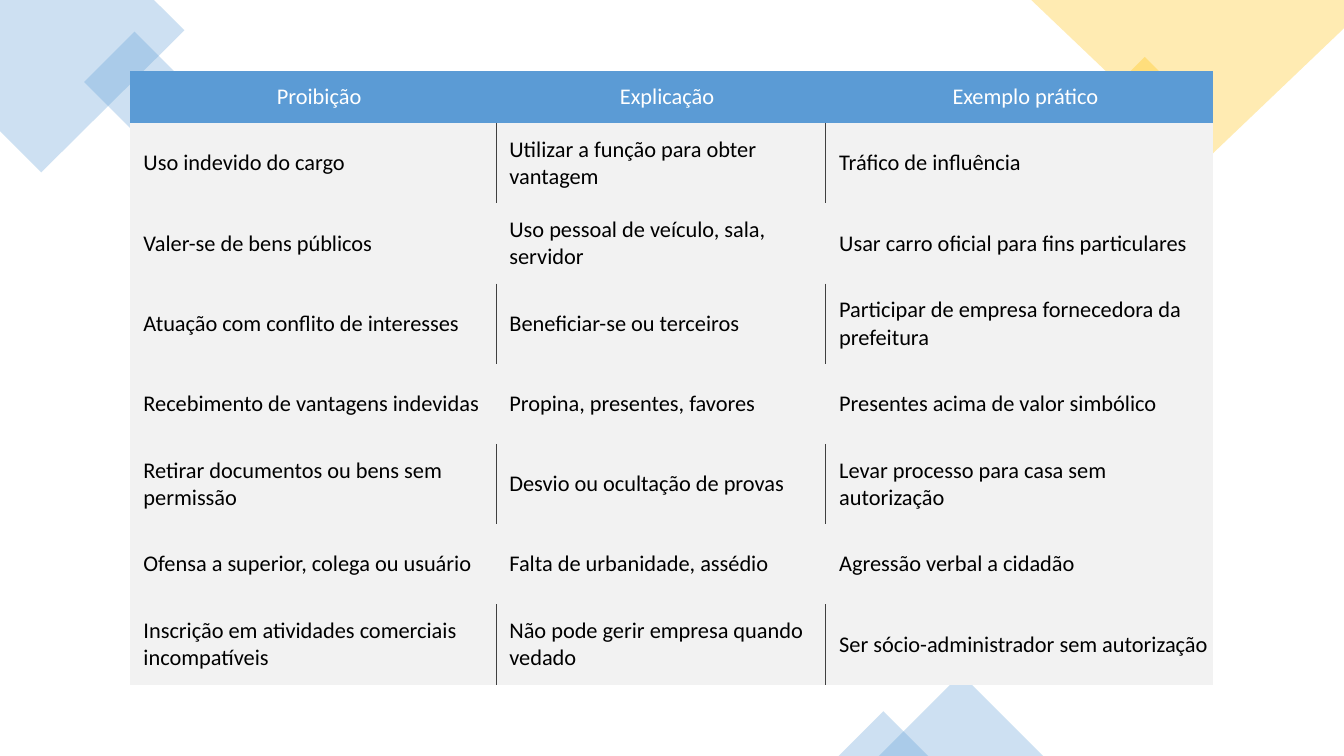
from lxml import etree
from pptx import Presentation
from pptx.dml.color import RGBColor
from pptx.enum import shapes as es, text as et
from pptx.oxml import ns
from pptx.util import Pt

BLUE = RGBColor(0x5B, 0x9B, 0xD5)
GOLD = RGBColor(0xFF, 0xC0, 0x00)
GREY = RGBColor(0xF2, 0xF2, 0xF2)
DARK = RGBColor(0x40, 0x40, 0x40)
WHITE = RGBColor(0xFF, 0xFF, 0xFF)
BLACK = RGBColor(0, 0, 0)

WIDE, HIGH = 960, 540
PLAIN = "{2D5ABB26-0587-4C30-8999-92F81FD0307C}"
COLS = (261.4, 235.6, 276.4)
HEAD, BODY = 37.4, 57.3
ROWS = (
    ("Proibição", "Explicação", "Exemplo prático"),
    ("Uso indevido do cargo", "Utilizar a função para obter vantagem",
     "Tráfico de influência"),
    ("Valer-se de bens públicos", "Uso pessoal de veículo, sala, servidor",
     "Usar carro oficial para fins particulares"),
    ("Atuação com conflito de interesses", "Beneficiar-se ou terceiros",
     "Participar de empresa fornecedora da prefeitura"),
    ("Recebimento de vantagens indevidas", "Propina, presentes, favores",
     "Presentes acima de valor simbólico"),
    ("Retirar documentos ou bens sem permissão",
     "Desvio ou ocultação de provas",
     "Levar processo para casa sem autorização"),
    ("Ofensa a superior, colega ou usuário", "Falta de urbanidade, assédio",
     "Agressão verbal a cidadão"),
    ("Inscrição em atividades comerciais incompatíveis",
     "Não pode gerir empresa quando vedado",
     "Ser sócio-administrador sem autorização"),
)


def paint(fill, color, clear=False):
    fill.solid()
    fill.fore_color.rgb = color
    if clear:
        node = fill._xPr.find(".//" + ns.qn("a:srgbClr"))
        etree.SubElement(node, ns.qn("a:alpha"), val="30000")


def tint(shape, color):
    shape.shadow.inherit = False
    shape.line.fill.background()
    paint(shape.fill, color, True)


def patch(slide, x, y, points, color):
    spots = [(Pt(x + a), Pt(y + b)) for a, b in points]
    form = slide.shapes.build_freeform(*spots[0])
    form.add_line_segments(spots[1:])
    tint(form.convert_to_shape(), color)


def preset(slide, kind, x, y, w, h, color, turn=0):
    shape = slide.shapes.add_shape(kind, Pt(x), Pt(y), Pt(w), Pt(h))
    shape.rotation = turn
    tint(shape, color)


def left_art(slide, x, y):
    patch(slide, x, y, [(110, 0), (0, 0), (0, 93.6), (29.5, 123.1),
                        (131.8, 21.6)], BLUE)
    preset(slide, es.MSO_SHAPE.RECTANGLE, x + 70.6, y + 33.1, 51, 51,
           BLUE, 315)


def right_art(slide, x, y):
    preset(slide, es.MSO_SHAPE.RECTANGLE, x - 169.3, y + 51.8, 54, 54,
           GOLD, 315)
    patch(slide, x, y, [(0, 0), (-223.4, 0), (-101, 116.6), (0, 20.2)], GOLD)


def base_art(slide, x, y):
    for left, wide in ((28.8, 117.4), (0, 64)):
        preset(slide, es.MSO_SHAPE.ISOSCELES_TRIANGLE, x + left, y - wide / 2,
               wide, wide / 2, BLUE)


def edge(cell, side):
    line = etree.SubElement(cell._tc.get_or_add_tcPr(), ns.qn("a:" + side),
                            w=str(Pt(0.5)))
    fill = etree.SubElement(line, ns.qn("a:solidFill"))
    etree.SubElement(fill, ns.qn("a:srgbClr"), val=str(DARK))


def style(cell, words, row, col):
    pale = row % 2 == 1
    if pale and col > 0:
        edge(cell, "lnL")
    if pale and col < len(COLS) - 1:
        edge(cell, "lnR")
    paint(cell.fill, GREY if row else BLUE, pale)
    cell.margin_left, cell.margin_right = Pt(9.6), Pt(0.8)
    cell.margin_top = cell.margin_bottom = Pt(7)
    cell.vertical_anchor = et.MSO_ANCHOR.MIDDLE
    cell.text = words
    para = cell.text_frame.paragraphs[0]
    para.alignment = et.PP_ALIGN.LEFT if row else et.PP_ALIGN.CENTER
    para.font.name, para.font.size = "Calibri", Pt(16)
    para.font.color.rgb = BLACK if row else WHITE


def rules(slide, x, y):
    high = HEAD + BODY * (len(ROWS) - 1)
    table = slide.shapes.add_table(len(ROWS), len(COLS), Pt(x), Pt(y),
                                   Pt(sum(COLS)), Pt(high)).table
    table.horz_banding = False
    table._tbl.tblPr.find(ns.qn("a:tableStyleId")).text = PLAIN
    for col, wide in enumerate(COLS):
        table.columns[col].width = Pt(wide)
    for row, texts in enumerate(ROWS):
        table.rows[row].height = Pt(BODY if row else HEAD)
        for col, words in enumerate(texts):
            style(table.cell(row, col), words, row, col)


def main():
    deck = Presentation()
    deck.slide_width, deck.slide_height = Pt(WIDE), Pt(HIGH)
    slide = deck.slides.add_slide(deck.slide_layouts[6])
    left_art(slide, 0, 0)
    right_art(slide, WIDE, 0)
    base_art(slide, 599, HIGH)
    rules(slide, 92.9, 50.6)
    deck.save("out.pptx")


if __name__ == "__main__":
    main()
